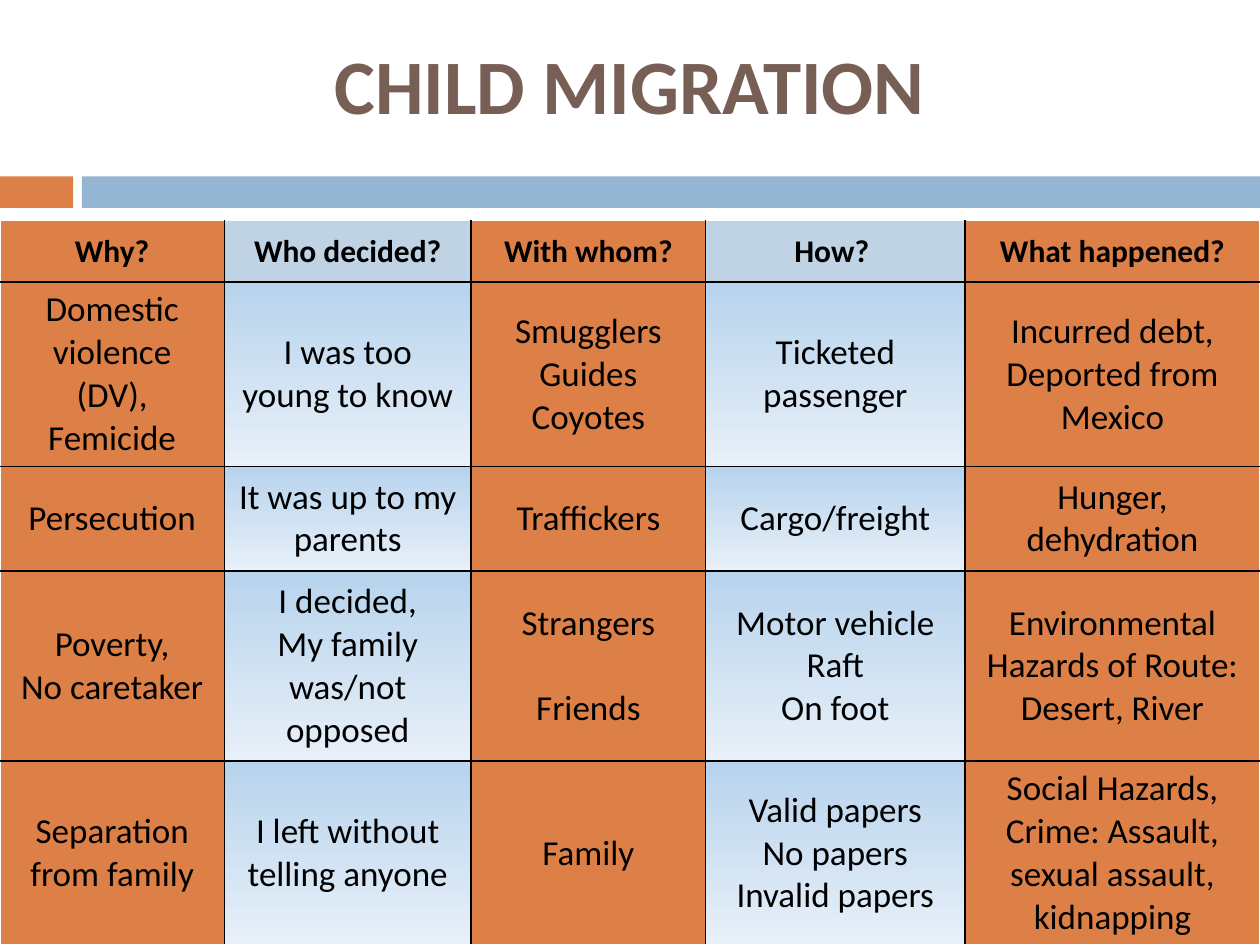
from lxml import etree
from pptx import Presentation
from pptx import util as u
from pptx.dml.color import RGBColor
from pptx.enum import shapes, text
from pptx.oxml.ns import qn

COLORS = {
    "orange": "DD8047",
    "blue": "94B6D2",
    "header_blue": "BFD3E4",
    "sky_top": "B7D3ED",
    "sky_bottom": "E8F0F8",
    "brown": "775F55",
    "black": "000000",
}
WIDTH, HEIGHT = u.Inches(10), u.Inches(7.5)
COLUMN_WIDTHS = [1.78, 1.96, 1.86, 2.06, 2.34]
ROW_HEIGHTS = [0.49, 1.46, 0.83, 1.51, 1.46]
TABLE_TOP = 1.75
LINE_GAP = 24

# "\n" starts a paragraph, "\v" a line; "\f" starts a paragraph set one line lower.
MIGRATION = [
    ["Why?", "Who decided?", "With whom?", "How? ", "What happened?"],
    ["Domestic violence\n(DV),\nFemicide", "I was too young to know",
     "Smugglers\vGuides\vCoyotes", "Ticketed passenger",
     "Incurred debt,\vDeported from Mexico"],
    ["Persecution", "It was up to my parents", "Traffickers",
     "Cargo/freight", "Hunger, dehydration"],
    ["Poverty,\vNo caretaker", "I decided,\nMy family was/not opposed",
     "Strangers\fFriends", "Motor vehicle\nRaft\nOn foot",
     "Environmental Hazards of Route: Desert, River"],
    ["Separation from family", "I left without telling anyone", "Family",
     "Valid papers\nNo papers\nInvalid papers",
     "Social Hazards, Crime: Assault, sexual assault, kidnapping"],
]


def rgb(name):
    return RGBColor.from_string(COLORS[name])


def style_paragraph(paragraph, size, color, bold):
    paragraph.alignment = text.PP_ALIGN.CENTER
    paragraph.font.color.rgb = rgb(color)
    for name, value in {"name": "Calibri", "size": u.Pt(size), "bold": bold}.items():
        for font in [paragraph.font, *(run.font for run in paragraph.runs)]:
            setattr(font, name, value)
    for run in paragraph.runs:
        run.font.color.rgb = rgb(color)


def add_title(slide, wording):
    title = slide.shapes.title
    place = {"left": 0, "top": 0, "width": WIDTH, "height": u.Inches(1.33)}
    for name, value in place.items():
        setattr(title, name, value)
    title.text_frame.text = wording
    title.text_frame.vertical_anchor = text.MSO_ANCHOR.MIDDLE
    style_paragraph(title.text_frame.paragraphs[0], 44, "brown", True)


def add_band(slide, left, right, color):
    band = slide.shapes.add_shape(
        shapes.MSO_SHAPE.RECTANGLE, u.Inches(left), u.Inches(1.4),
        u.Inches(right - left), u.Inches(0.25))
    band.shadow.inherit = False
    band.fill.solid()
    band.fill.fore_color.rgb = rgb(color)
    band.line.fill.background()


def add_borders(cell, sides):
    properties = cell._tc.get_or_add_tcPr()
    for side in sides:
        line = etree.SubElement(properties, qn(f"a:ln{side}"), w=str(u.Pt(1)))
        fill = etree.SubElement(line, qn("a:solidFill"))
        etree.SubElement(fill, qn("a:srgbClr"), val=COLORS["black"])


def fill_cell(cell, row, column):
    """Alternate orange and blue columns; blue body cells fade downwards."""
    if column % 2 and row:
        cell.fill.gradient()
        cell.fill.gradient_angle = 270
        for stop, color in zip(cell.fill.gradient_stops, ("sky_top", "sky_bottom")):
            stop.color.rgb = rgb(color)
    else:
        cell.fill.solid()
        cell.fill.fore_color.rgb = rgb("header_blue" if column % 2 else "orange")


def write_cell(cell, wording, is_header):
    cell.vertical_anchor = text.MSO_ANCHOR.MIDDLE
    cell.text_frame.text = wording.replace("\f", "\n")
    for paragraph in cell.text_frame.paragraphs:
        style_paragraph(paragraph, 18 if is_header else 20, "black", is_header)
    if "\f" in wording:
        cell.text_frame.paragraphs[-1].space_before = u.Pt(LINE_GAP)


def add_migration_table(slide):
    last_row, last_column = len(ROW_HEIGHTS) - 1, len(COLUMN_WIDTHS) - 1
    table = slide.shapes.add_table(
        last_row + 1, last_column + 1, 0, u.Inches(TABLE_TOP),
        WIDTH, u.Inches(sum(ROW_HEIGHTS))).table
    for column, width in zip(table.columns, COLUMN_WIDTHS):
        column.width = u.Inches(width)
    for row, height in zip(table.rows, ROW_HEIGHTS):
        row.height = u.Inches(height)
    for r, wordings in enumerate(MIGRATION):
        for c, wording in enumerate(wordings):
            cell = table.cell(r, c)
            inner = {"L": c > 0, "R": c < last_column, "T": r > 0, "B": r < last_row}
            add_borders(cell, [side for side, shown in inner.items() if shown])
            fill_cell(cell, r, c)
            write_cell(cell, wording, r == 0)


def main():
    deck = Presentation()
    deck.slide_width, deck.slide_height = WIDTH, HEIGHT
    slide = deck.slides.add_slide(deck.slide_layouts[5])
    add_band(slide, 0, 0.58, "orange")
    add_band(slide, 0.65, 10, "blue")
    add_title(slide, "CHILD MIGRATION")
    add_migration_table(slide)
    deck.save("out.pptx")


if __name__ == "__main__":
    main()
